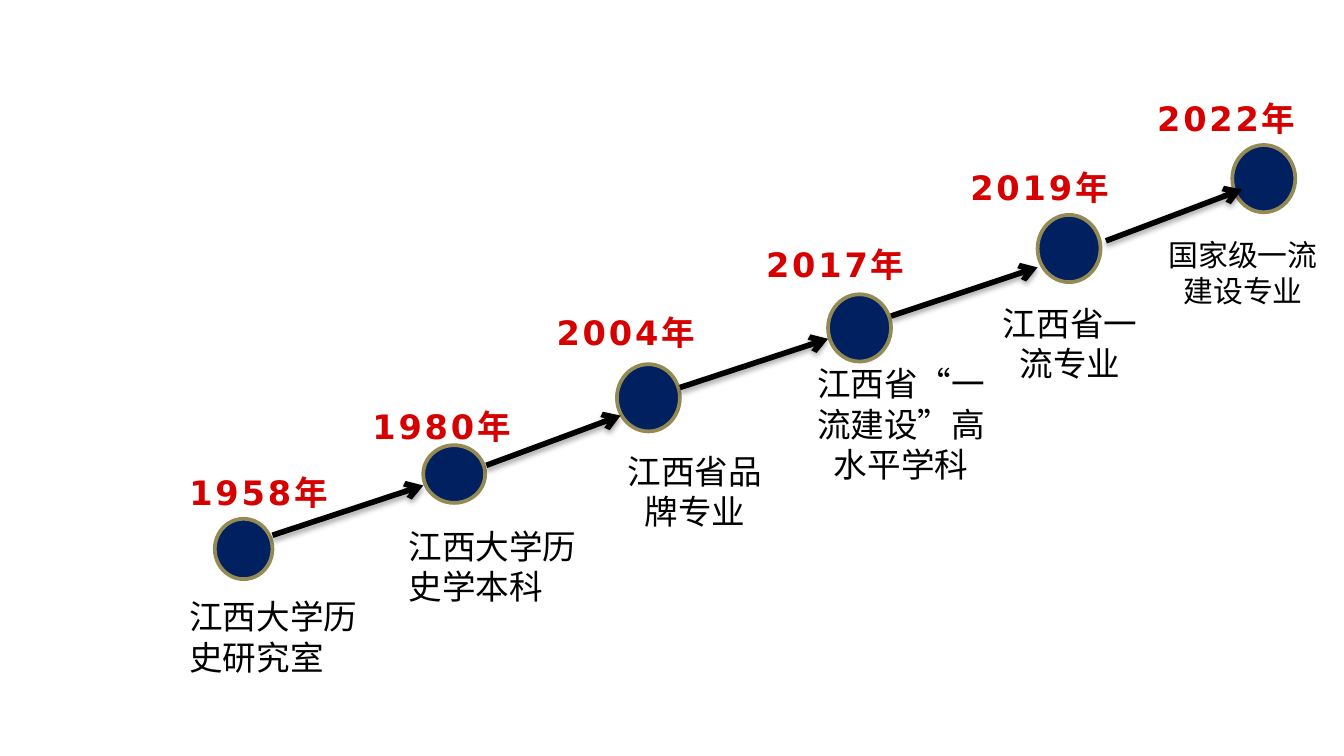
import collections

import lxml.etree
import pptx
import pptx.dml.color
import pptx.enum.shapes
import pptx.enum.text
import pptx.oxml
import pptx.oxml.ns
import pptx.util

Cm = pptx.util.Cm
Pt = pptx.util.Pt
LEFT = pptx.enum.text.PP_ALIGN.LEFT
CENTER = pptx.enum.text.PP_ALIGN.CENTER
LATIN_FONT = "DejaVu Sans"
CHINESE_FONT = "Noto Sans CJK SC"
LABEL_HEIGHT = 1.8

Milestone = collections.namedtuple(
    "Milestone", "year label dot year_offset label_offset label_height align size"
)
Arrow = collections.namedtuple("Arrow", "leave arrive")

MILESTONES = [
    Milestone("1958年", "江西大学历史研究室", (4.06, 9.8, 1.09, 1.14),
              (-0.66, -0.98, 3.35), (-0.73, 1.33, 3.84), LABEL_HEIGHT, LEFT, 18),
    Milestone("1980年", "江西大学历史学本科", (8, 8.41, 1.17, 1.09),
              (-1.14, -0.84, 3.48), (-0.53, 1.39, 3.73), LABEL_HEIGHT, LEFT, 18),
    Milestone("2004年", "江西省品牌专业", (11.66, 6.88, 1.19, 1.27),
              (-1.32, -1.09, 3.12), (-0.33, 1.5, 3.61), LABEL_HEIGHT, CENTER, 18),
    Milestone("2017年", "江西省“一流建设”高水平学科", (15.65, 5.56, 1.19, 1.27),
              (-1.35, -1.06, 3.15), (-0.51, 1.17, 3.78), 2.57, CENTER, 18),
    Milestone("2019年", "江西省一流专业", (19.61, 4.06, 1.19, 1.27),
              (-1.45, -1.01, 3.15), (-1.19, 1.53, 3.61), LABEL_HEIGHT, CENTER, 18),
    Milestone("2022年", "国家级一流建设专业", (23.29, 2.74, 1.19, 1.27),
              (-1.6, -0.99, 3.15), (-1.6, 1.6, 3.61), 1.63, CENTER, 16),
]

ARROWS = [
    Arrow((0, 0.31), (0, 0.76)),
    Arrow((0.02, 0.38), (0.07, 0.97)),
    Arrow((0, 0.44), (0, 0.84)),
    Arrow((0, 0.41), (0, 0.99)),
    Arrow((0.1, 0.49), (0.18, 0.84)),
]


def color(value):
    """Return the colour for a hex string."""
    return pptx.dml.color.RGBColor.from_string(value)


def add_text(slide, box, text, font_name, size, text_color, align=LEFT, inset=(0.25, 0.13)):
    """Add a wrapped text box in one font and return its run."""
    shape = slide.shapes.add_textbox(*map(Cm, box))
    frame = shape.text_frame
    frame.word_wrap = True
    frame.margin_left = frame.margin_right = Cm(inset[0])
    frame.margin_top = frame.margin_bottom = Cm(inset[1])
    frame.text = text
    paragraph = frame.paragraphs[0]
    paragraph.alignment = align
    run = paragraph.runs[0]
    run.font.size = Pt(size)
    run.font.color.rgb = color(text_color)
    run.font.name = font_name
    properties = run._r.get_or_add_rPr()
    lxml.etree.SubElement(properties, pptx.oxml.ns.qn("a:ea"), typeface=CHINESE_FONT)
    return run


def add_milestone(slide, milestone):
    """Add a dot with its year above and its label below."""
    left, top, width, height = milestone.dot
    dot = slide.shapes.add_shape(
        pptx.enum.shapes.MSO_SHAPE.OVAL, Cm(left), Cm(top), Cm(width), Cm(height)
    )
    dot.shadow.inherit = False
    dot.fill.solid()
    dot.fill.fore_color.rgb = color("002060")
    dot.line.color.rgb = color("948A54")
    dot.line.width = Pt(2)

    across, down, year_width = milestone.year_offset
    year = add_text(slide, (left + across, top + down, year_width, 0.81),
                    milestone.year, LATIN_FONT, 18, "D70000", inset=(0.18, 0.1))
    year.font.bold = True
    year._r.get_or_add_rPr().set("spc", "150")

    across, down, label_width = milestone.label_offset
    add_text(slide, (left + across, top + down, label_width, milestone.label_height),
             milestone.label, CHINESE_FONT, milestone.size, "000000", milestone.align)


def add_arrow(slide, start_dot, end_dot, arrow):
    """Add a shadowed arrow from the right of one dot to the left of the next."""
    connector = slide.shapes.add_connector(
        pptx.enum.shapes.MSO_CONNECTOR.STRAIGHT,
        Cm(start_dot[0] + start_dot[2] + arrow.leave[0]),
        Cm(start_dot[1] + arrow.leave[1]),
        Cm(end_dot[0] + arrow.arrive[0]),
        Cm(end_dot[1] + arrow.arrive[1]),
    )
    connector.line.color.rgb = color("000000")
    connector.line.width = Pt(3)
    line = connector.line._get_or_add_ln()
    lxml.etree.SubElement(line, pptx.oxml.ns.qn("a:tailEnd"), type="arrow")
    connector._element.spPr.append(pptx.oxml.parse_xml(
        f'<a:effectLst {pptx.oxml.ns.nsdecls("a")}>'
        f'<a:outerShdw blurRad="{Pt(3.1)}" dist="{Pt(1.8)}" dir="5400000" rotWithShape="0">'
        '<a:srgbClr val="000000"><a:alpha val="35000"/></a:srgbClr>'
        '</a:outerShdw></a:effectLst>'
    ))


def main():
    """Build the timeline slide and save it."""
    presentation = pptx.Presentation()
    presentation.slide_width = Cm(25.4)
    presentation.slide_height = Cm(14.28)
    slide = presentation.slides.add_slide(presentation.slide_layouts[6])
    for milestone in MILESTONES:
        add_milestone(slide, milestone)
    for start, end, arrow in zip(MILESTONES, MILESTONES[1:], ARROWS):
        add_arrow(slide, start.dot, end.dot, arrow)
    presentation.save("out.pptx")


if __name__ == "__main__":
    main()
